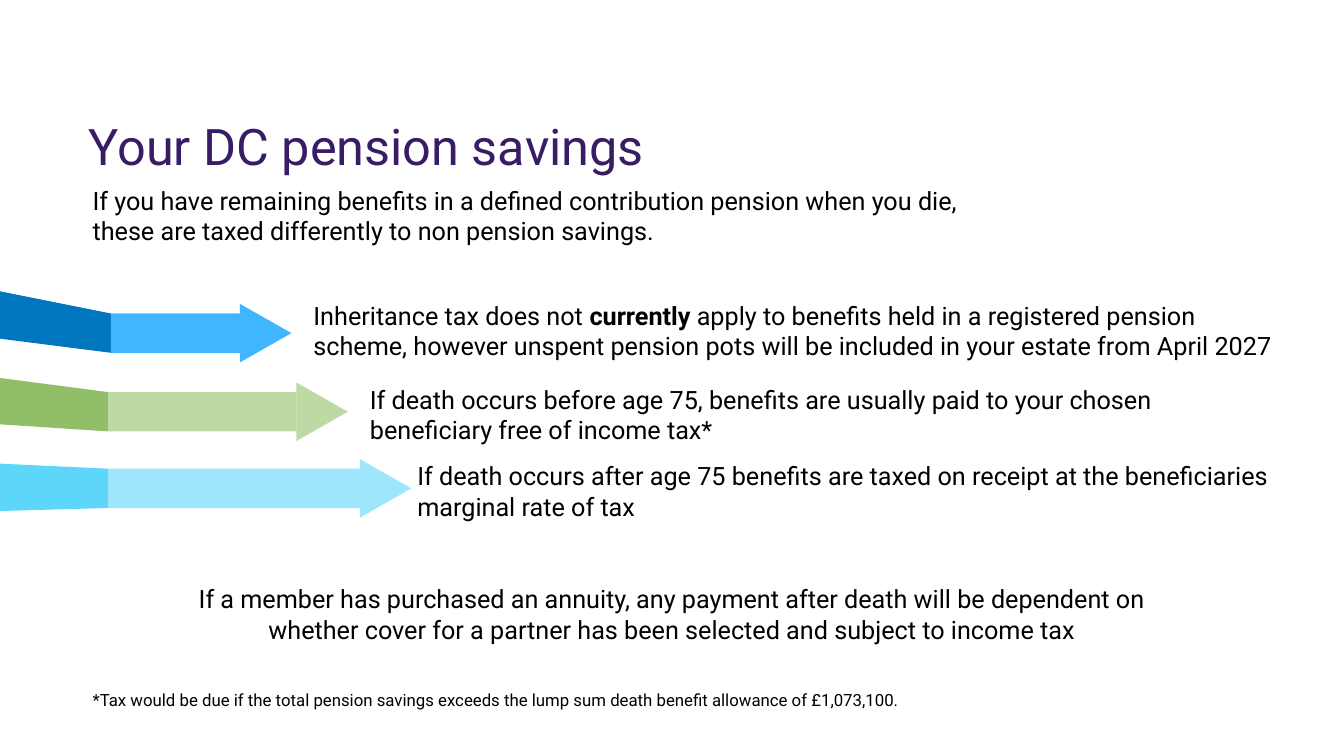
from dataclasses import dataclass

from pptx import Presentation
from pptx.dml.color import RGBColor
from pptx.enum.shapes import MSO_SHAPE as Preset
from pptx.enum.text import MSO_ANCHOR as Anchor, MSO_AUTO_SIZE as AutoSize, PP_ALIGN as Align
from pptx.shapes.base import BaseShape
from pptx.shapes.group import GroupShape
from pptx.slide import Slide
from pptx.text.text import TextFrame
from pptx.util import Emu, Inches, Pt

COLORS = {
    "title": "391C66", "text": "000000",
    "blue": "0076BE", "blue_light": "3FB6FF",
    "green": "91BF67", "green_light": "BDD9A4",
    "cyan": "5DD6F9", "cyan_light": "9EE6FB",
}
CELL = Inches(0.1)
BAR_ROWS = 3.9
HEAD_COLUMNS = 5.1
HEAD_ROWS = 5.8
TEXT_ROWS = 7.1


@dataclass(frozen=True)
class Box:
    column: float
    row: float
    columns: float
    rows: float

    def lengths(self) -> tuple[Emu, Emu, Emu, Emu]:
        return grid(self.column), grid(self.row), grid(self.columns), grid(self.rows)


@dataclass(frozen=True)
class ArrowPoint:
    color: str
    edge_top: float
    edge_bottom: float
    fold: float
    bar_top: float
    bar_end: float
    text_box: Box
    text: str


@dataclass(frozen=True)
class Note:
    box: Box
    text: str
    size: int = 18
    align: Align = Align.LEFT
    space_after: int = 0


POINTS = (
    ArrowPoint("blue", 28.9, 33.6, 11, 31.1, 23.8, Box(30.1, 29.3, 98.5, TEXT_ROWS),
               "Inheritance tax does not **currently** apply to benefits held in a registered "
               "pension scheme, however unspent pension pots will be included in your estate "
               "from April 2027"),
    ArrowPoint("green", 37.5, 42.1, 10.7, 38.9, 29.4, Box(35.7, 37.6, 90.1, TEXT_ROWS),
               "If death occurs before age 75, benefits are usually paid to your chosen "
               "beneficiary free of income tax*"),
    ArrowPoint("cyan", 46, 50.7, 10.7, 46.5, 35.7, Box(40.4, 45.2, 88.2, TEXT_ROWS),
               "If death occurs after age 75 benefits are taxed on receipt at the "
               "beneficiaries marginal rate of tax"),
)
INTRODUCTION = Note(
    Box(8.2, 17.9, 94, TEXT_ROWS),
    "If you have remaining benefits in a defined contribution pension when you die, "
    "these are taxed differently to non pension savings.")
CLOSING_NOTES = (
    Note(Box(17.3, 57.4, 98.7, TEXT_ROWS),
         "If a member has purchased an annuity, any payment after death will be dependent on "
         "whether cover for a partner has been selected and subject to income tax",
         align=Align.CENTER, space_after=9),
    Note(Box(8.2, 67.9, 96.4, 3),
         "*Tax would be due if the total pension savings exceeds the lump sum death benefit "
         "allowance of £1,073,100.", size=12),
)


def grid(cells: float) -> Emu:
    return Emu(round(cells * CELL))


def write_text(frame: TextFrame, text: str, *, size: int = 18, color: str = "text",
               align: Align = Align.LEFT, space_after: int = 0) -> None:
    frame.word_wrap = True
    paragraph = frame.paragraphs[0]
    paragraph.alignment = align
    paragraph.space_after = Pt(space_after)
    for index, part in enumerate(text.split("**")):
        run = paragraph.add_run()
        run.text = part
        run.font.name = "Roboto"
        run.font.size = Pt(size)
        run.font.bold = index % 2 == 1
        run.font.color.rgb = RGBColor.from_string(COLORS[color])


def add_text(parent: Slide | GroupShape, box: Box, text: str, **text_format) -> None:
    frame = parent.shapes.add_textbox(*box.lengths()).text_frame
    write_text(frame, text, **text_format)
    frame.auto_size = AutoSize.SHAPE_TO_FIT_TEXT


def paint(shape: BaseShape, color: str) -> None:
    shape.shadow.inherit = False
    shape.fill.solid()
    shape.fill.fore_color.rgb = RGBColor.from_string(COLORS[color])
    shape.line.fill.background()


def add_arrow_point(slide: Slide, point: ArrowPoint) -> None:
    group = slide.shapes.add_group_shape()
    bar_bottom = point.bar_top + BAR_ROWS
    light = f"{point.color}_light"

    outline = group.shapes.build_freeform(0, grid(point.edge_top))
    corners = ((point.fold, point.bar_top), (point.fold, bar_bottom), (0, point.edge_bottom))
    outline.add_line_segments([(grid(x), grid(y)) for x, y in corners], close=True)
    paint(outline.convert_to_shape(), point.color)

    bar = Box(point.fold, point.bar_top, point.bar_end - point.fold, BAR_ROWS)
    paint(group.shapes.add_shape(Preset.RECTANGLE, *bar.lengths()), light)

    head_box = Box(point.bar_end + (HEAD_COLUMNS - HEAD_ROWS) / 2,
                   point.bar_top + (BAR_ROWS - HEAD_COLUMNS) / 2, HEAD_ROWS, HEAD_COLUMNS)
    head = group.shapes.add_shape(Preset.ISOSCELES_TRIANGLE, *head_box.lengths())
    head.rotation = 90
    paint(head, light)

    add_text(group, point.text_box, point.text, space_after=9)


def add_title(slide: Slide, box: Box, text: str) -> None:
    title = slide.shapes.title
    title.left, title.top, title.width, title.height = box.lengths()
    frame = title.text_frame
    frame.margin_left = frame.margin_top = frame.margin_right = frame.margin_bottom = 0
    frame.vertical_anchor = Anchor.MIDDLE
    frame.auto_size = AutoSize.NONE
    write_text(frame, text, size=36, color="title")


def add_note(slide: Slide, note: Note) -> None:
    add_text(slide, note.box, note.text, size=note.size, align=note.align,
             space_after=note.space_after)


def main() -> None:
    presentation = Presentation()
    presentation.slide_width = Inches(13.33)
    presentation.slide_height = Inches(7.5)
    slide = presentation.slides.add_slide(presentation.slide_layouts.get_by_name("Title Only"))
    add_title(slide, Box(8.8, 11.6, 115.8, 5.7), "Your DC pension savings")
    add_note(slide, INTRODUCTION)
    for point in POINTS:
        add_arrow_point(slide, point)
    for note in CLOSING_NOTES:
        add_note(slide, note)
    presentation.save("out.pptx")


if __name__ == "__main__":
    main()
